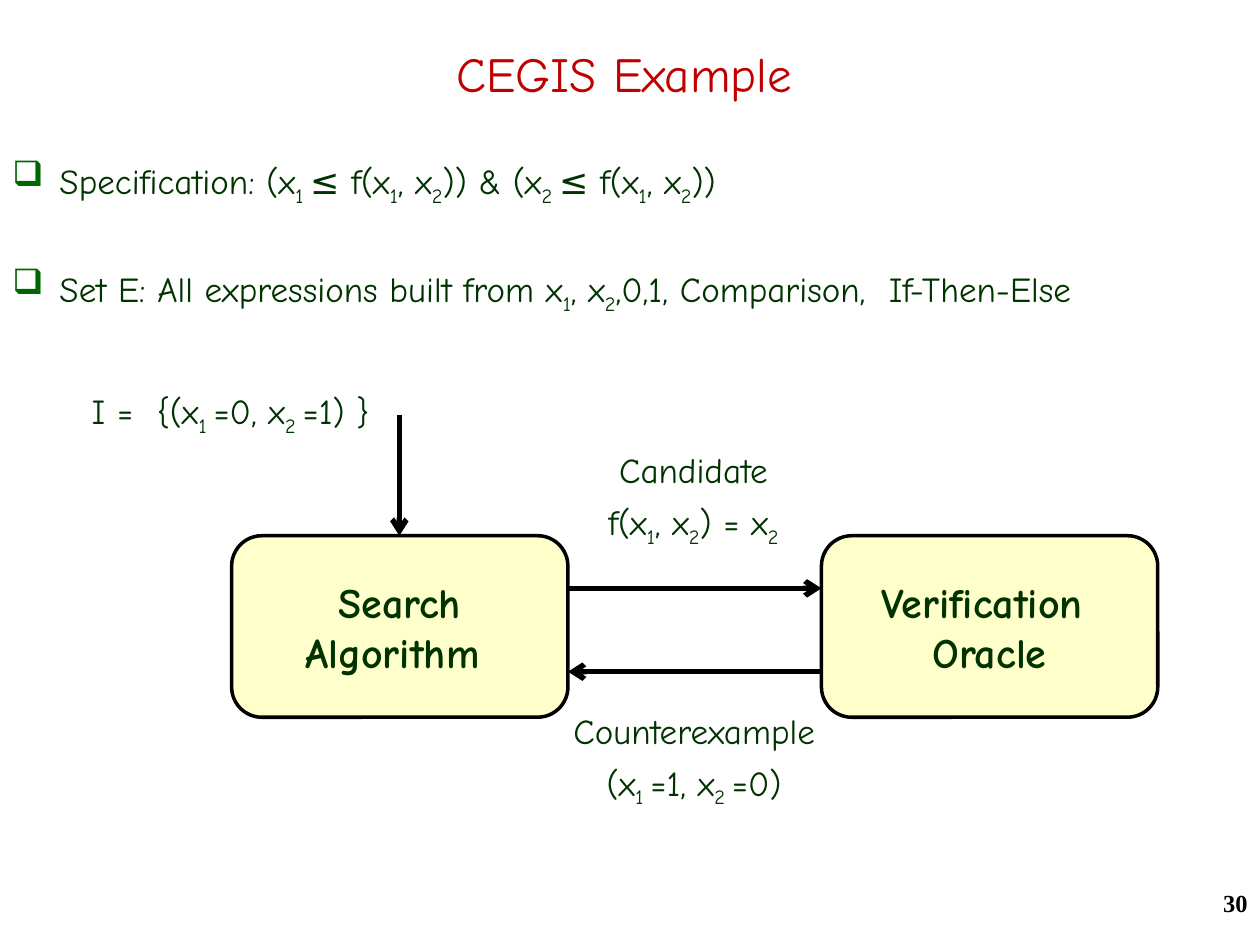
from dataclasses import dataclass

from lxml.etree import SubElement
from pptx import Presentation
from pptx.dml.color import RGBColor
from pptx.enum.shapes import MSO_CONNECTOR as Line, MSO_SHAPE as Shape
from pptx.enum.text import MSO_ANCHOR as Anchor, PP_ALIGN as Align
from pptx.oxml.ns import qn
from pptx.util import Cm, Pt


@dataclass(frozen=True)
class Theme:
    font: str = "Comic Neue"
    number_font: str = "Times New Roman"
    title: str = "C00000"
    text: str = "003300"
    bullet: str = "006600"
    box: str = "FFFFCC"
    line: str = "000000"
    title_size: int = 28
    box_size: int = 24
    text_size: int = 20
    number_size: int = 14


T = Theme()


def rgb(color):
    return RGBColor.from_string(color)


def style(p, size, color, font=T.font, bold=False):
    for r in p.runs:
        r.font.size = Pt(size)
        r.font.name = font
        r.font.bold = bold
        r.font.color.rgb = rgb(color)


def add_text(slide, at, text, size, color, align=Align.LEFT, **font):
    sp = slide.shapes.add_textbox(*map(Cm, at))
    tf = sp.text_frame
    tf.word_wrap = True
    tf.text = text
    tf.paragraphs[0].alignment = align
    style(tf.paragraphs[0], size, color, **font)
    return tf


def write_math(p, text):
    """Write text in which _ lowers the next digit and any space after it."""
    first, *rest = text.split("_")
    p.add_run().text = first
    for part in rest:
        end = 2 if part[1:2] == " " else 1
        r = p.add_run()
        r.text = part[:end]
        r.font._element.set("baseline", "-25000")
        if part[end:]:
            p.add_run().text = part[end:]
    style(p, T.text_size, T.text)


def add_math(slide, at, lines, align=Align.LEFT, gap=8):
    tf = slide.shapes.add_textbox(*map(Cm, at)).text_frame
    tf.word_wrap = True
    for i, line in enumerate(lines):
        p = tf.add_paragraph() if i else tf.paragraphs[0]
        p.alignment = align
        p.line_spacing = 0.8
        p.space_before = Pt(gap if i else 8)
        write_math(p, line)
    return tf


def add_bullet(p):
    pPr = p._p.get_or_add_pPr()
    pPr.set("marL", str(Cm(0.95)))
    pPr.set("indent", str(-Cm(0.95)))
    color = SubElement(pPr, qn("a:buClr"))
    SubElement(color, qn("a:srgbClr")).set("val", T.bullet)
    SubElement(pPr, qn("a:buChar")).set("char", "❑")


def add_box(slide, at, text):
    sp = slide.shapes.add_shape(Shape.ROUNDED_RECTANGLE, *map(Cm, at))
    sp.shadow.inherit = False
    sp.fill.solid()
    sp.fill.fore_color.rgb = rgb(T.box)
    sp.line.color.rgb = rgb(T.line)
    sp.line.width = Pt(2)
    tf = sp.text_frame
    tf.word_wrap = False
    tf.vertical_anchor = Anchor.MIDDLE
    tf.text = text
    for p in tf.paragraphs:
        p.alignment = Align.CENTER
        style(p, T.box_size, T.text, bold=True)


def add_arrow(slide, *ends):
    cx = slide.shapes.add_connector(Line.STRAIGHT, *map(Cm, ends))
    cx.line.color.rgb = rgb(T.line)
    cx.line.width = Pt(3)
    SubElement(cx.line._get_or_add_ln(), qn("a:tailEnd")).set("type", "arrow")
    SubElement(cx._element.spPr, qn("a:effectLst"))


def main():
    prs = Presentation()
    prs.slide_width, prs.slide_height = Cm(25.4), Cm(19.05)
    slide = prs.slides.add_slide(prs.slide_layouts[6])

    # Title and page number
    title = add_text(slide, (1.7, 0.63, 21.77, 1.7), "CEGIS Example",
                     T.title_size, T.title, Align.CENTER)
    title.vertical_anchor = Anchor.MIDDLE
    add_text(slide, (20.12, 17.78, 5.28, 1.27), "30", T.number_size, T.line,
             Align.RIGHT, font=T.number_font, bold=True)

    # Problem statement
    body = add_math(slide, (0, 3.18, 25.4, 4.65), [
        "Specification: (x_1 ≤ f(x_1, x_2)) & (x_2 ≤ f(x_1, x_2))",
        "Set E: All expressions built from x_1, x_2,0,1, Comparison,  If-Then-Else",
    ], gap=40)
    for p in body.paragraphs:
        add_bullet(p)

    # Search and verification loop
    search_x, oracle_x, top, width, height = 4.67, 16.56, 10.8, 6.78, 3.66
    search_right = search_x + width
    add_box(slide, (search_x, top, width, height), "Search\nAlgorithm ")
    add_box(slide, (oracle_x, top, width, height), "Verification \nOracle")
    add_arrow(slide, 8.05, 8.36, 8.05, top)
    add_arrow(slide, search_right, 11.86, oracle_x, 11.86)
    add_arrow(slide, oracle_x, 13.54, search_right, 13.54)

    # Labels on the arrows
    add_math(slide, (1.6, 7.82, 6.88, 2.39), ["I =  {(x_1 =0, x_2 =1) }"])
    add_math(slide, (11.3, 9.09, 5.36, 2.31),
             ["Candidate", "f(x_1, x_2) = x_2"], Align.CENTER)
    add_math(slide, (10.87, 14.35, 6.25, 2.31),
             ["Counterexample", "(x_1 =1, x_2 =0)"], Align.CENTER)

    prs.save("out.pptx")


if __name__ == "__main__":
    main()
